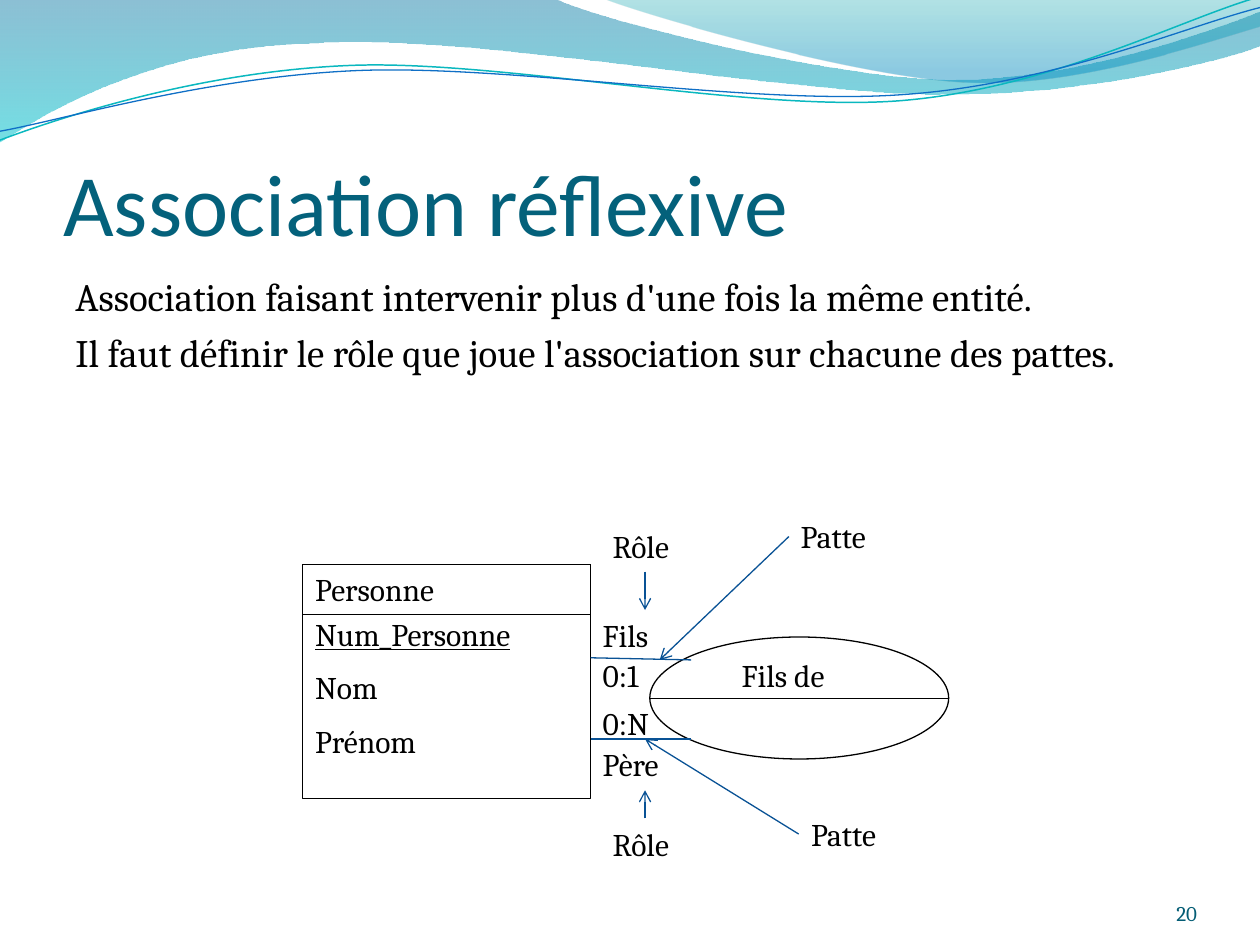
from pptx import Presentation
from pptx.dml.color import RGBColor
from pptx.enum.shapes import MSO_CONNECTOR, MSO_SHAPE
from pptx.enum.text import MSO_ANCHOR, PP_ALIGN
from pptx.oxml.ns import qn
from pptx.util import Pt
from lxml import etree

LINE = MSO_CONNECTOR.STRAIGHT
RECTANGLE, OVAL = MSO_SHAPE.RECTANGLE, MSO_SHAPE.OVAL
TOP, BOTTOM = MSO_ANCHOR.TOP, MSO_ANCHOR.BOTTOM
LEFT, RIGHT, JUSTIFY = PP_ALIGN.LEFT, PP_ALIGN.RIGHT, PP_ALIGN.JUSTIFY

BLACK = RGBColor(0x00, 0x00, 0x00)
TITLE_TEAL = RGBColor(0x04, 0x61, 0x7B)
NUMBER_TEAL = RGBColor(0x04, 0x5D, 0x75)
LINK_BLUE = RGBColor(0x09, 0x52, 0x95)
WAVE_TEAL = RGBColor(0x0A, 0xB8, 0xBF)
WAVE_BLUE = RGBColor(0x0F, 0x6F, 0xC6)
# Gradient stops: position, colour, opacity in percent
BAND_STOPS = [(0, RGBColor(0x00, 0x74, 0xA1), 45), (1, RGBColor(0x00, 0xC6, 0xCF), 55)]
CORNER_STOPS = [(0, RGBColor(0x00, 0xA1, 0xA9), 30), (0.8, RGBColor(0x00, 0x8B, 0xBF), 45)]

STRAND_TILT = 357.3
MARGINS = (7.2, 3.6, 7.2, 3.6)


def write_text(shape, lines, size=18, font="Cambria", color=BLACK, align=LEFT,
               anchor=TOP, margins=MARGINS, gap=0, underlined=()):
    """Fill a shape with paragraphs; gap is the space in points between them."""
    frame = shape.text_frame
    frame.word_wrap = True
    frame.vertical_anchor = anchor
    (frame.margin_left, frame.margin_top,
     frame.margin_right, frame.margin_bottom) = map(Pt, margins)
    for index, line in enumerate(lines):
        para = frame.add_paragraph() if index else frame.paragraphs[0]
        para.alignment = align
        para.space_before = Pt(gap if index else 0)
        span = para.add_run()
        span.text = line
        span.font.size, span.font.name = Pt(size), font
        span.font.color.rgb = color
        if line in underlined:
            span.font.underline = True


def add_text(page, box, lines, **text_format):
    write_text(page.shapes.add_textbox(*map(Pt, box)), lines, **text_format)


def add_outline(page, kind, box):
    shape = page.shapes.add_shape(kind, *map(Pt, box))
    shape.shadow.inherit = False
    shape.fill.background()
    shape.line.color.rgb = BLACK
    shape.line.width = Pt(0.75)
    return shape


def add_line(page, start, end, color=LINK_BLUE, arrow=False):
    line = page.shapes.add_connector(LINE, *map(Pt, (*start, *end)))
    line.line.color.rgb = color
    line.line.width = Pt(0.75)
    if arrow:
        etree.SubElement(line.line._get_or_add_ln(), qn("a:tailEnd"), type="arrow")
    etree.SubElement(line._element.spPr, qn("a:effectLst"))


def add_wave(page, origin, start, steps, closed):
    """Draw steps from start: pairs are corners, sixes are Bézier curves."""
    def place(x, y):
        return Pt(origin[0] + x), Pt(origin[1] + y)

    builder = page.shapes.build_freeform(*place(*start))
    for step in steps:
        builder.add_line_segments(
            [place(*step[i:i + 2]) for i in range(0, len(step), 2)], close=False)
    shape = builder.convert_to_shape()
    shape.shadow.inherit = False
    outline = next(shape._element.iter(qn("a:path")))
    segments = iter(outline.findall(qn("a:lnTo")))
    for step in steps:
        segment = next(segments)
        if len(step) == 6:
            segment.tag = qn("a:cubicBezTo")
            for _ in range(2):
                extra = next(segments)
                segment.append(extra[0])
                outline.remove(extra)
    if closed:
        etree.SubElement(outline, qn("a:close"))
    return shape


def add_band(page, origin, start, steps, stops):
    shape = add_wave(page, origin, start, steps, True)
    shape.line.fill.background()
    shape.fill.gradient()
    shape.fill.gradient_angle = 270
    for stop, (position, color, _) in zip(shape.fill.gradient_stops, stops):
        stop.position = position
        stop.color.rgb = color
    tints = shape._element.spPr.iter(qn("a:srgbClr"))
    for tint, (_, _, opacity) in zip(tints, stops):
        etree.SubElement(tint, qn("a:alpha"), val=str(opacity * 1000))


def add_strand(page, origin, start, steps, color, width):
    shape = add_wave(page, origin, start, steps, False)
    shape.rotation = STRAND_TILT
    shape.fill.background()
    shape.line.color.rgb = color
    shape.line.width = Pt(width)


def add_header_waves(page, origin):
    add_band(page, origin, (0, 0), [
        (317, -0.7), (343, 12, 478, 45.4, 546, 45.4), (614, 45.4, 690, 18.7, 720, 6.5),
        (720.7, 26), (708, 31.7, 626, 54.7, 537, 54), (448, 54, 275, 20.2, 185, 24.5),
        (93, 26, 33, 60, -0.7, 81.4), (0, 0)], BAND_STOPS)
    add_band(page, origin, (345, -0.7), [
        (366, 8, 491, 44.6, 554, 46.8), (616, 49.7, 692, 23, 720, 15), (720, 0),
        (345, -0.7)], CORNER_STOPS)
    add_strand(page, origin, (-1.4, 63.1), [
        (33.8, 51.7, 114.1, 29.4, 199.8, 29.9), (284.8, 30.3, 425.8, 67.2, 512.4, 64.9),
        (599, 62.3, 676.5, 25.7, 720.2, 15.5)], WAVE_TEAL, 0.85)
    add_strand(page, origin, (-1.1, 58), [
        (32.9, 53.7, 118.2, 32.6, 204.1, 33), (290.4, 33.4, 429.1, 63.8, 515.5, 61.4),
        (601.5, 59.6, 678.4, 30, 721.4, 21.3)], WAVE_BLUE, 0.75)


def add_entity(page, box, name, attributes, key):
    left, top, width, height = box
    add_outline(page, RECTANGLE, box)
    heading = add_outline(page, RECTANGLE, (left, top, width, 28.6))
    write_text(heading, [name], margins=(7.2, 3.2, 7.2, 3.6))
    add_text(page, (left, top + 25.2, width - 12, height - 17), attributes,
             gap=9, underlined=(key,))


def add_association(page, box, name):
    left, top, width, height = box
    middle = top + height / 2 + 0.3
    add_text(page, (left + 45.4, top + 7.2, 85, 28.8), [name])
    add_outline(page, OVAL, box)
    add_line(page, (left, middle), (left + width, middle), BLACK)


def add_diagram(page, box):
    left, top = box[:2]

    def at(x, y):
        return left + x, top + y

    add_entity(page, (*at(0, 31), 164.4, 133.7), "Personne",
               ["Num_Personne", "Nom", "Prénom"], key="Num_Personne")
    add_association(page, (*at(198.3, 72.4), 170.8, 69.7), "Fils de")
    legs = [((164.5, 84.3), (222, 85.5)), ((164.5, 130.7), (222, 130.7))]
    for start, end in legs:
        add_line(page, at(*start), at(*end))
    labels = [("0:1", 164.3, 79.5, 51), ("0:N", 164.3, 107, 51),
              ("Père", 164.3, 130.7, 62.6), ("Fils", 164.3, 57, 62.6),
              ("Patte", 277.5, 0.4, 67.7), ("Rôle", 170, 6, 51),
              ("Patte", 283.4, 170.5, 67.7), ("Rôle", 170, 176.5, 51)]
    for label, x, y, width in labels:
        add_text(page, (*at(x, y), width, 28.8), [label])
    arrows = [((277.8, 15), (204, 85.5)), ((195.6, 35), (195.6, 57)),
              ((283.4, 185), (195.6, 130.7)), ((195.6, 176), (195.6, 160))]
    for start, end in arrows:
        add_line(page, at(*start), at(*end), arrow=True)


def main():
    deck = Presentation()
    deck.slide_width, deck.slide_height = Pt(720), Pt(540)
    page = deck.slides.add_slide(deck.slide_layouts[6])
    add_header_waves(page, (0, 0))
    add_text(page, (36.2, 55.2, 648, 90), ["Association réflexive"], size=50,
             font="Calibri", color=TITLE_TEAL, anchor=BOTTOM, margins=(0, 3.6, 0, 0))
    add_text(page, (624, 500.4, 60, 28.8), ["20"], size=12, color=NUMBER_TEAL,
             align=RIGHT, anchor=BOTTOM, margins=(0, 0, 0, 0))
    add_diagram(page, (173, 291.6, 369, 205))
    add_text(page, (36, 152.2, 648, 72),
             ["Association faisant intervenir plus d'une fois la même entité.",
              "Il faut définir le rôle que joue l'association sur chacune des pattes."],
             size=22.2, align=JUSTIFY, gap=5.2)
    deck.save("out.pptx")


if __name__ == "__main__":
    main()
